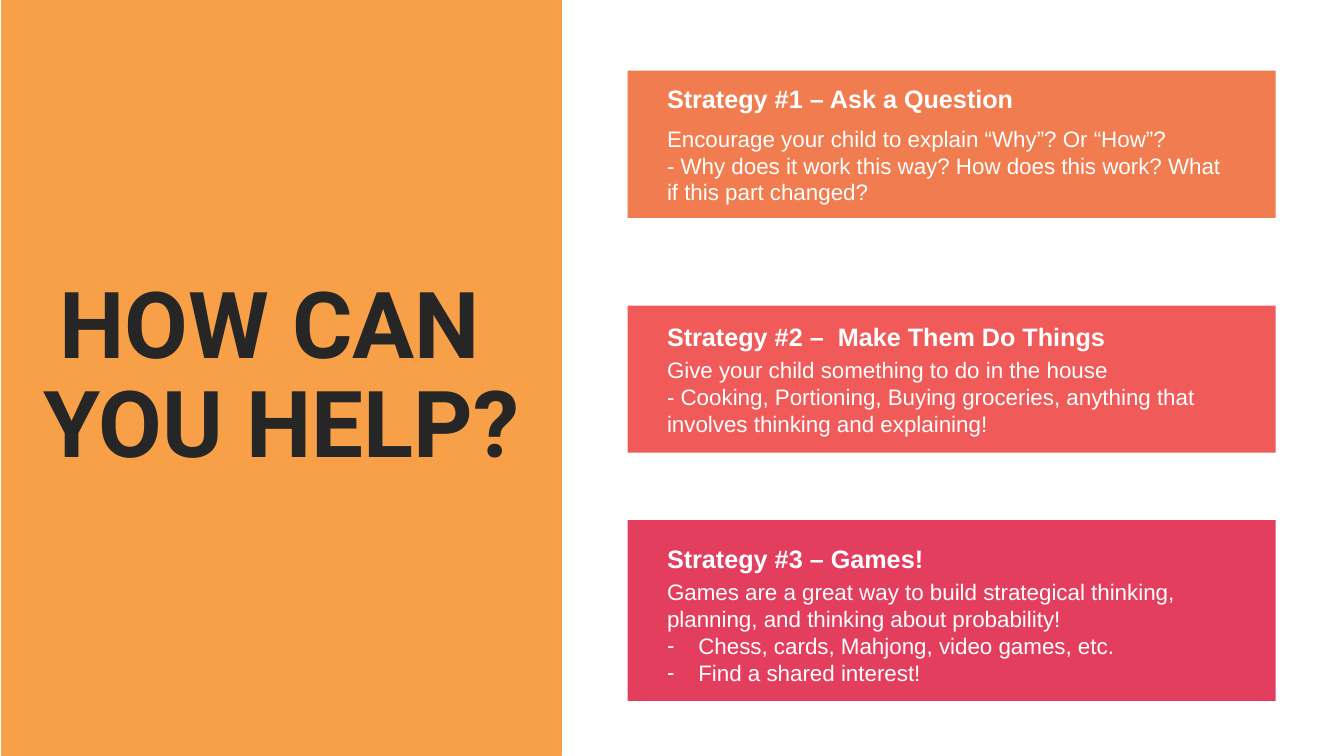
from lxml import etree
from pptx import Presentation
from pptx import util as u
from pptx.dml.color import RGBColor
from pptx.enum import shapes, text
from pptx.oxml.ns import qn

STRATEGIES = [
    {"color": "F07C4F", "top": 1.78, "height": 3.71, "heading_top": 1.98, "body_top": 3.02,
     "heading": "Strategy #1 – Ask a Question",
     "body": ["Encourage your child to explain “Why”? Or “How”?",
              "- Why does it work this way? How does this work? What if this part changed?"],
     "bullets": []},
    {"color": "F05A59", "top": 7.7, "height": 3.71, "heading_top": 7.98, "body_top": 8.86,
     "heading": "Strategy #2 –  Make Them Do Things",
     "body": ["Give your child something to do in the house",
              "- Cooking, Portioning, Buying groceries, anything that involves thinking "
              "and explaining!"],
     "bullets": []},
    {"color": "E43E5F", "top": 13.11, "height": 4.55, "heading_top": 13.56, "body_top": 14.45,
     "heading": "Strategy #3 – Games!",
     "body": ["Games are a great way to build strategical thinking, planning, and thinking "
              "about probability!"],
     "bullets": ["Chess, cards, Mahjong, video games, etc.", "Find a shared interest!"]},
]


def rgb(value):
    return RGBColor.from_string(value)


def write(paragraph, words, size=16, font="Arial", color="FFFFFF", bold=False, bullet=None):
    run = paragraph.add_run()
    run.text = words
    run.font.size = u.Pt(size)
    run.font.name = font
    run.font.color.rgb = rgb(color)
    run.font.bold = bold
    if bullet:
        properties = paragraph._p.get_or_add_pPr()
        indent = u.Cm(0.79)
        properties.set("marL", str(indent))
        properties.set("indent", str(-indent))
        etree.SubElement(properties, qn("a:buFont")).set("typeface", font)
        etree.SubElement(properties, qn("a:buChar")).set("char", bullet)


class StrategySlide:
    band_left, band_width = 15.82, 16.33
    text_left, text_width = 16.56, 14.88

    def __init__(self, presentation):
        self.slide = presentation.slides.add_slide(presentation.slide_layouts[5])

    def title_panel(self, words, fill):
        title = self.slide.shapes.title
        title.left, title.top = u.Cm(0.03), u.Cm(0)
        title.width, title.height = u.Cm(14.12), u.Cm(19.05)
        title.fill.solid()
        title.fill.fore_color.rgb = rgb(fill)
        title.line.color.rgb = rgb(fill)
        title.line.width = u.Pt(0.75)
        frame = title.text_frame
        frame.word_wrap = True
        frame.auto_size = text.MSO_AUTO_SIZE.NONE
        frame.vertical_anchor = text.MSO_ANCHOR.MIDDLE
        paragraph = frame.paragraphs[0]
        paragraph.alignment = text.PP_ALIGN.CENTER
        paragraph.line_spacing = 0.9
        paragraph.space_before = u.Pt(10)
        write(paragraph, words, size=66, font="Roboto", color="262626", bold=True)

    def band(self, top, height, fill):
        band = self.slide.shapes.add_shape(
            shapes.MSO_SHAPE.RECTANGLE, u.Cm(self.band_left), u.Cm(top),
            u.Cm(self.band_width), u.Cm(height))
        band.shadow.inherit = False
        band.fill.solid()
        band.fill.fore_color.rgb = rgb(fill)
        band.line.fill.background()

    def text_box(self, group, top, height, lines, bullets=(), **style):
        box = group.shapes.add_textbox(
            u.Cm(self.text_left), u.Cm(top), u.Cm(self.text_width), u.Cm(height))
        frame = box.text_frame
        frame.word_wrap = True
        frame.auto_size = text.MSO_AUTO_SIZE.SHAPE_TO_FIT_TEXT
        entries = [(line, None) for line in lines] + [(line, "-") for line in bullets]
        for index, (line, bullet) in enumerate(entries):
            paragraph = frame.add_paragraph() if index else frame.paragraphs[0]
            write(paragraph, line, bullet=bullet, **style)

    def strategy_text(self, strategy):
        group = self.slide.shapes.add_group_shape()
        self.text_box(group, strategy["heading_top"], 1.02, [strategy["heading"]],
                      size=18, bold=True)
        body_height = 3 if strategy["bullets"] else 2.31
        self.text_box(group, strategy["body_top"], body_height, strategy["body"],
                      strategy["bullets"])


def main():
    presentation = Presentation()
    presentation.slide_width = u.Cm(33.87)
    presentation.slide_height = u.Cm(19.05)
    page = StrategySlide(presentation)
    page.title_panel("HOW CAN  YOU HELP?", "F8A047")
    for strategy in STRATEGIES:
        page.band(strategy["top"], strategy["height"], strategy["color"])
        page.strategy_text(strategy)
    presentation.save("out.pptx")


if __name__ == "__main__":
    main()
